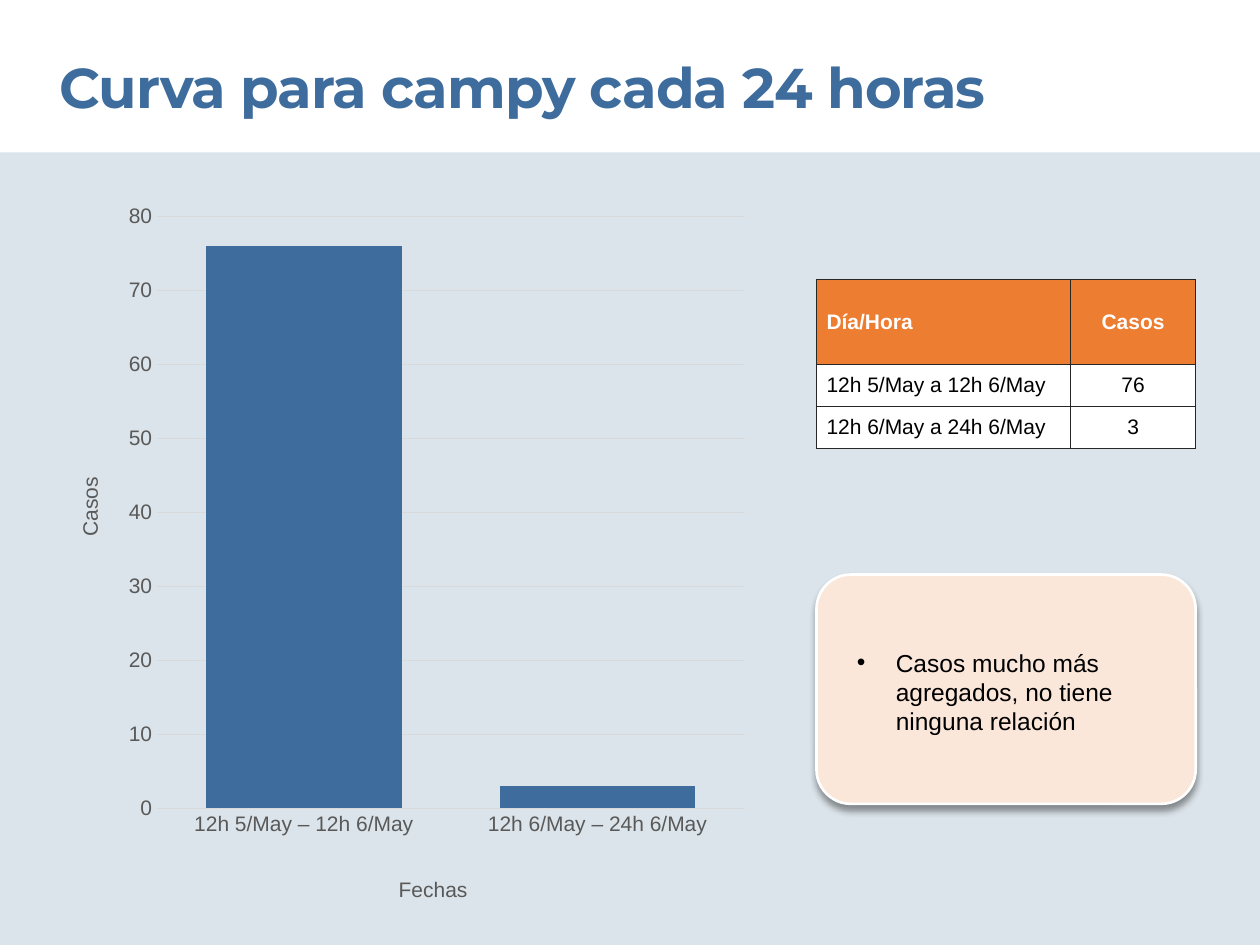
from dataclasses import dataclass

from lxml import etree
from pptx import Presentation
from pptx.chart.data import CategoryChartData
from pptx.dml.color import RGBColor
from pptx.enum.chart import XL_CHART_TYPE, XL_TICK_MARK
from pptx.enum.shapes import MSO_SHAPE
from pptx.enum.text import MSO_ANCHOR, MSO_AUTO_SIZE, PP_ALIGN
from pptx.oxml import parse_xml
from pptx.oxml.ns import nsdecls, qn
from pptx.util import Emu, Inches, Pt

RECT, ROUND = MSO_SHAPE.RECTANGLE, MSO_SHAPE.ROUNDED_RECTANGLE
COLUMN = XL_CHART_TYPE.COLUMN_CLUSTERED
NONE = XL_TICK_MARK.NONE
LEFT, CENTER = PP_ALIGN.LEFT, PP_ALIGN.CENTER
TOP, MIDDLE = MSO_ANCHOR.TOP, MSO_ANCHOR.MIDDLE
FIXED = MSO_AUTO_SIZE.NONE
WIDE, HIGH = Inches(10), Inches(7.5)
COLS, ROWS = 100, 75


@dataclass(frozen=True)
class Theme:
    blue: str = "3D6C9D"
    pale: str = "DBE4EA"
    peach: str = "FBE7DA"
    orange: str = "ED7D31"
    white: str = "FFFFFF"
    black: str = "000000"
    gray: str = "595959"
    grid: str = "D9D9D9"
    edge: str = "262626"
    head: str = "Montserrat"
    body: str = "Arial"
    title: int = 32
    note: int = 14
    small: int = 12


@dataclass(frozen=True)
class Box:
    x: float
    y: float
    w: float
    h: float

    def spots(self) -> tuple:
        return across(self.x), down(self.y), across(self.w), down(self.h)


@dataclass(frozen=True)
class Case:
    start: str
    end: str
    count: int


THEME = Theme()
CASES = [Case("12h 5/May", "12h 6/May", 76), Case("12h 6/May", "24h 6/May", 3)]


def across(n: float) -> Emu:
    return Emu(round(WIDE * n / COLS))


def down(n: float) -> Emu:
    return Emu(round(HIGH * n / ROWS))


def tint(code: str) -> RGBColor:
    return RGBColor.from_string(code)


def style(font, size: int, code: str, face: str = THEME.body, bold: bool = False) -> None:
    font.size, font.name, font.bold = Pt(size), face, bold
    font.color.rgb = tint(code)


def write(para, text: str, size: int, code: str, face: str = THEME.body, bold: bool = False):
    run = para.add_run()
    run.text = text
    style(run.font, size, code, face, bold)
    return run


def paint(shape, code: str) -> None:
    shape.fill.solid()
    shape.fill.fore_color.rgb = tint(code)


def panel(slide, kind, box: Box, code: str):
    shape = slide.shapes.add_shape(kind, *box.spots())
    shape.shadow.inherit = False
    paint(shape, code)
    shape.line.fill.background()
    return shape


def frame(shape) -> None:
    text = shape.text_frame
    text.margin_left = text.margin_right = text.margin_top = text.margin_bottom = 0
    text.word_wrap, text.auto_size = True, FIXED
    text.vertical_anchor = TOP


def head(slide, box: Box, text: str) -> None:
    title = slide.shapes.title
    title.left, title.top, title.width, title.height = box.spots()
    frame(title)
    para = title.text_frame.paragraphs[0]
    para.alignment, para.line_spacing = LEFT, 1.0
    run = write(para, text, THEME.title, THEME.blue, THEME.head, True)
    run._r.get_or_add_rPr().set("spc", "-50")


def card(slide, box: Box) -> None:
    shape = panel(slide, ROUND, box, THEME.peach)
    shape.adjustments[0] = 0.15
    shape.line.color.rgb = tint(THEME.white)
    shape.line.width = Pt(1.5)
    shade = parse_xml(
        f'<a:outerShdw {nsdecls("a")} blurRad="{Pt(4)}" dist="{Pt(3)}" dir="5400000" '
        f'rotWithShape="0"><a:srgbClr val="{THEME.black}"><a:alpha val="40000"/>'
        '</a:srgbClr></a:outerShdw>')
    shape._element.spPr.find(qn("a:effectLst")).append(shade)


def note(slide, box: Box, text: str) -> None:
    shape = slide.shapes.add_textbox(*box.spots())
    frame(shape)
    para = shape.text_frame.paragraphs[0]
    write(para, text, THEME.note, THEME.black)
    props = para._p.get_or_add_pPr()
    props.set("marL", str(across(3.1)))
    props.set("indent", str(-across(3.1)))
    etree.SubElement(props, qn("a:buFont")).set("typeface", THEME.body)
    etree.SubElement(props, qn("a:buChar")).set("char", "•")


def border(cell) -> None:
    props = cell._tc.get_or_add_tcPr()
    for spot, side in enumerate(("lnL", "lnR", "lnT", "lnB")):
        props.insert(spot, parse_xml(
            f'<a:{side} {nsdecls("a")} w="{Pt(0.5)}"><a:solidFill>'
            f'<a:srgbClr val="{THEME.edge}"/></a:solidFill></a:{side}>'))


def table(slide, box: Box) -> None:
    rows = [("Día/Hora", "Casos")]
    rows += [(f"{case.start} a {case.end}", str(case.count)) for case in CASES]
    grid = slide.shapes.add_table(len(rows), 2, *box.spots()).table
    for col, share in zip(grid.columns, (0.67, 0.33)):
        col.width = across(box.w * share)
    for i, row in enumerate(rows):
        top = i == 0
        grid.rows[i].height = down(box.h * (0.5 if top else 0.25))
        for j, text in enumerate(row):
            cell = grid.cell(i, j)
            paint(cell, THEME.orange if top else THEME.white)
            border(cell)
            cell.vertical_anchor = MIDDLE
            cell.margin_left = cell.margin_right = across(0.8)
            para = cell.text_frame.paragraphs[0]
            para.alignment = CENTER if j else LEFT
            write(para, text, THEME.small, THEME.white if top else THEME.black, bold=top)


def place(node, x: float, y: float, size: tuple = (), inner: bool = False) -> None:
    parts = [("layoutTarget", "inner")] if inner else []
    parts += [("xMode", "edge"), ("yMode", "edge"), ("x", x), ("y", y)]
    parts += zip("wh", size)
    for old in node.findall(qn("c:layout")):
        node.remove(old)
    body = "".join(f'<c:{name} val="{val}"/>' for name, val in parts)
    layout = parse_xml(f'<c:layout {nsdecls("c")}><c:manualLayout>{body}'
                       '</c:manualLayout></c:layout>')
    node.insert(0 if inner else 1, layout)


def axis(item, text: str, x: float, y: float) -> None:
    item.major_tick_mark = item.minor_tick_mark = NONE
    style(item.tick_labels.font, THEME.small, THEME.gray)
    title = item.axis_title
    write(title.text_frame.paragraphs[0], text, THEME.small, THEME.gray)
    place(title._element, x, y)


def rule(line) -> None:
    line.color.rgb, line.width = tint(THEME.grid), Pt(0.75)


def graph(slide, box: Box) -> None:
    data = CategoryChartData()
    data.categories = [f"{case.start} – {case.end}" for case in CASES]
    data.add_series("Casos", [case.count for case in CASES])
    chart = slide.shapes.add_chart(COLUMN, *box.spots(), data).chart
    chart.has_legend = chart.has_title = False
    style(chart.font, THEME.small, THEME.gray)
    plot = chart.plots[0]
    plot.gap_width, plot.vary_by_categories = 50, False
    paint(plot.series[0].format, THEME.blue)
    days, tally = chart.category_axis, chart.value_axis
    axis(days, "Fechas", 0.48, 0.95)
    axis(tally, "Casos", 0.02, 0.39)
    rule(days.format.line)
    rule(tally.major_gridlines.format.line)
    tally.format.line.fill.background()
    tally.minimum_scale, tally.maximum_scale, tally.major_unit = 0, 80, 10
    area = chart._chartSpace.chart.plotArea
    place(area, 0.14, 0.03, (0.84, 0.83), True)


def main() -> None:
    deck = Presentation()
    deck.slide_width, deck.slide_height = WIDE, HIGH
    slide = deck.slides.add_slide(deck.slide_layouts[5])
    panel(slide, RECT, Box(0, 12.1, COLS, ROWS - 12.1), THEME.pale)
    card(slide, Box(64.8, 45.6, 30.1, 18.2))
    head(slide, Box(4.7, 4.2, 90.2, 5.4), "Curva para campy cada 24 horas")
    note(slide, Box(68, 51.4, 23, 7.1), "Casos mucho más agregados, no tiene ninguna relación")
    table(slide, Box(64.8, 22.2, 30.1, 13.4))
    graph(slide, Box(4.7, 15.5, 55.5, 56.6))
    deck.save("out.pptx")


if __name__ == "__main__":
    main()
